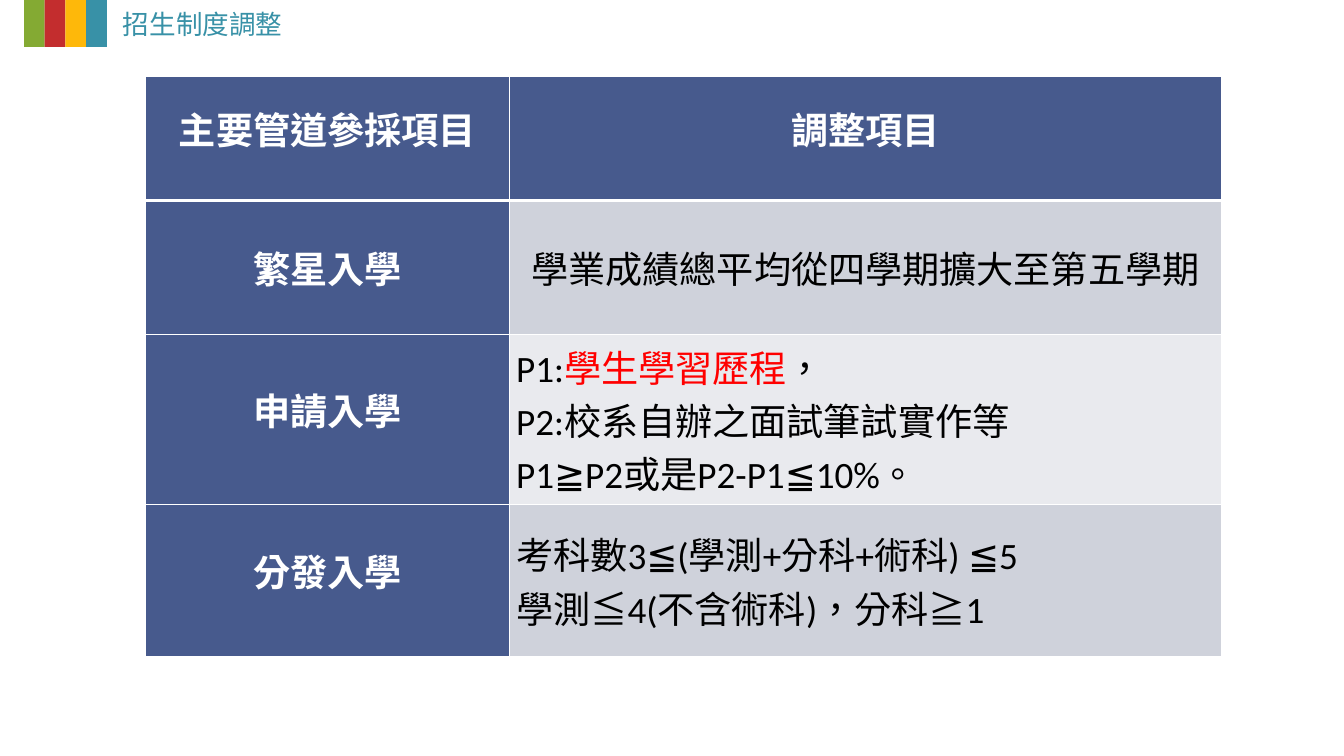
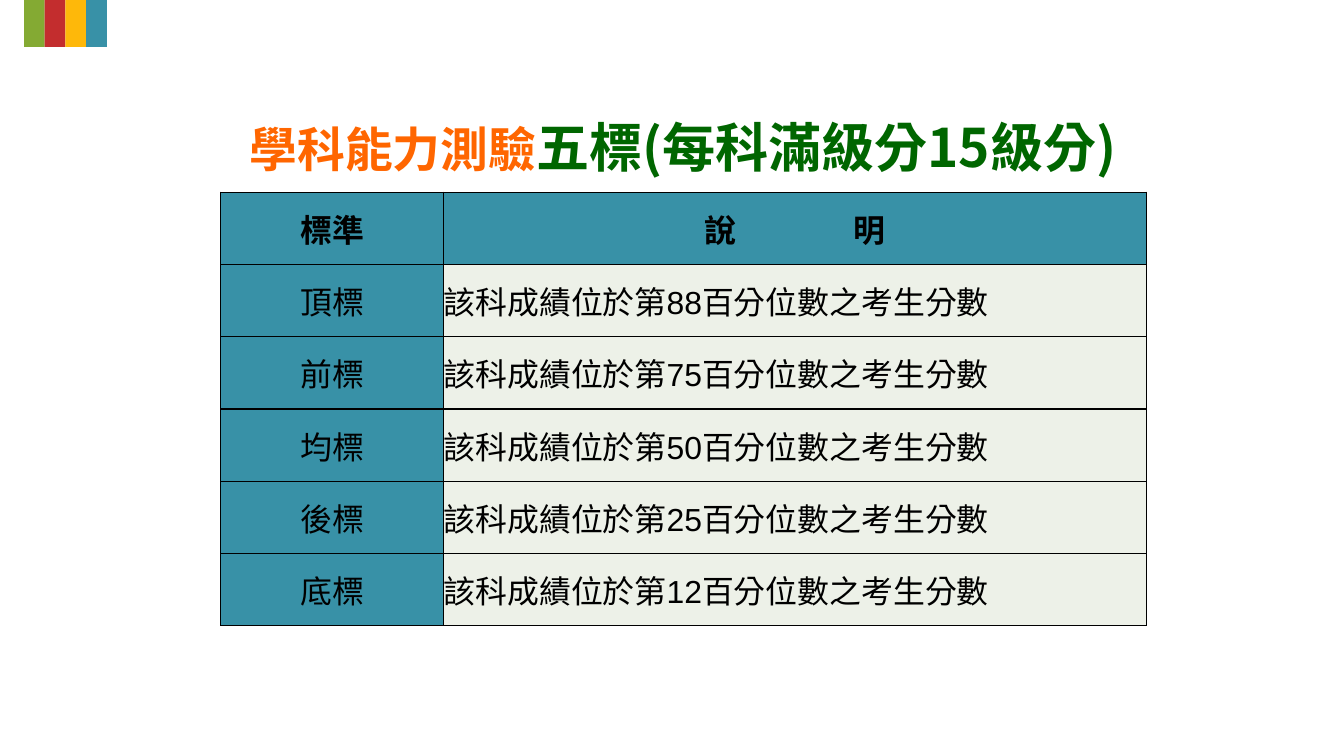
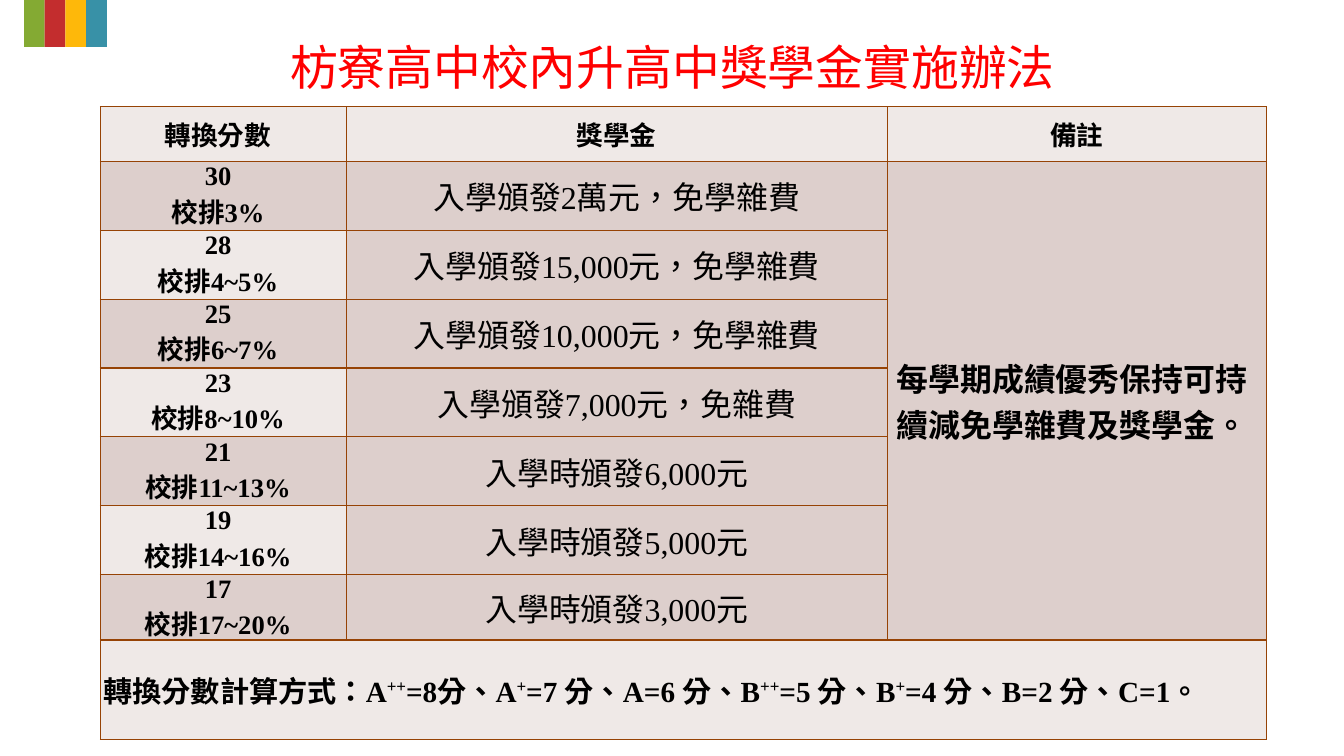
from dataclasses import dataclass
from typing import NamedTuple, Optional

from lxml import etree
from pptx import Presentation
from pptx.dml.color import RGBColor
from pptx.enum.shapes import MSO_SHAPE
from pptx.enum.text import MSO_ANCHOR, PP_ALIGN
from pptx.oxml.ns import qn
from pptx.util import Cm, Pt

LEFT, CENTER, JUSTIFY = PP_ALIGN.LEFT, PP_ALIGN.CENTER, PP_ALIGN.JUSTIFY
MIDDLE = MSO_ANCHOR.MIDDLE
RECTANGLE = MSO_SHAPE.RECTANGLE

CJK_FONT = "Noto Sans CJK SC"
TEAL, RED, BLACK, WHITE = "3891A7", "FF0000", "000000", "FFFFFF"
ORANGE, GREEN = "FF6600", "006600"
BAND_COLORS = ["84AA33", "C32D2E", "FEB80A", TEAL]
NAVY, GREY, PALE_GREY = "475A8D", "CFD2DB", "E9EAEE"
PALE_GREEN = "EDF1E8"
BROWN, ROSE, PALE_ROSE = "964305", "DDCFCC", "EFE9E7"


class Run(NamedTuple):
    text: str
    size: float
    color: str = BLACK
    bold: bool = False
    superscript: bool = False
    spacing: int = 0  # points added after each character


@dataclass
class Cell:
    paragraphs: list[list[Run]]
    fill: str
    align: PP_ALIGN = CENTER
    line_points: Optional[float] = None
    indent: float = 0
    right_inset: Optional[float] = None
    span: tuple[int, int] = (1, 1)


@dataclass
class Grid:
    left: float
    top: float
    widths: list[float]
    heights: list[float]
    rows: list[list[Optional[Cell]]]
    font: str
    border: str
    inset: float = 0
    thick_below: Optional[int] = None
    thick_points: float = 1


class Title(NamedTuple):
    left: float
    top: float
    width: float
    height: float
    runs: list[Run]
    align: PP_ALIGN = CENTER


def rgb(color: str) -> RGBColor:
    return RGBColor.from_string(color)


def write_runs(paragraph, runs: list[Run], font_name: str) -> None:
    for part in runs:
        run = paragraph.add_run()
        run.text = part.text
        font = run.font
        font.name, font.size, font.bold = font_name, Pt(part.size), part.bold
        font.color.rgb = rgb(part.color)
        properties = run._r.get_or_add_rPr()
        properties.set("lang", "zh-TW")
        if part.superscript:
            properties.set("baseline", "34000")
        if part.spacing:
            properties.set("spc", str(part.spacing * 100))
        east_asian = etree.SubElement(properties, qn("a:ea"))
        east_asian.set("typeface", CJK_FONT)


def add_band(slide) -> None:
    width = 0.55
    for index, color in enumerate(BAND_COLORS):
        bar = slide.shapes.add_shape(
            RECTANGLE, Cm(0.64 + index * width), Cm(0), Cm(width), Cm(1.25))
        bar.shadow.inherit = False
        bar.fill.solid()
        bar.fill.fore_color.rgb = rgb(color)
        bar.line.fill.background()


def add_title(slide, title: Title) -> None:
    box = slide.shapes.add_textbox(
        Cm(title.left), Cm(title.top), Cm(title.width), Cm(title.height))
    box.text_frame.word_wrap = True
    paragraph = box.text_frame.paragraphs[0]
    paragraph.alignment = title.align
    paragraph.line_spacing = 0.9
    write_runs(paragraph, title.runs, CJK_FONT)


def set_borders(cell, color: str, top: float, bottom: float) -> None:
    properties = cell._tc.get_or_add_tcPr()
    for side, points in (("L", 1), ("R", 1), ("T", top), ("B", bottom)):
        line = etree.SubElement(properties, qn(f"a:ln{side}"), w=str(Pt(points)))
        fill = etree.SubElement(line, qn("a:solidFill"))
        etree.SubElement(fill, qn("a:srgbClr"), val=color)


def fill_cell(cell, content: Cell, grid: Grid) -> None:
    cell.fill.solid()
    cell.fill.fore_color.rgb = rgb(content.fill)
    cell.vertical_anchor = MIDDLE
    right = grid.inset if content.right_inset is None else content.right_inset
    cell.margin_left, cell.margin_right = Cm(grid.inset), Cm(right)
    cell.margin_top = cell.margin_bottom = 0
    frame = cell.text_frame
    for index, runs in enumerate(content.paragraphs):
        paragraph = frame.add_paragraph() if index else frame.paragraphs[0]
        paragraph.alignment = content.align
        if content.line_points:
            paragraph.line_spacing = Pt(content.line_points)
        if content.indent:
            paragraph._p.get_or_add_pPr().set("marL", str(Cm(content.indent)))
        write_runs(paragraph, runs, grid.font)


def add_grid(slide, grid: Grid) -> None:
    table = slide.shapes.add_table(
        len(grid.heights), len(grid.widths), Cm(grid.left), Cm(grid.top),
        Cm(sum(grid.widths)), Cm(sum(grid.heights))).table
    table.first_row = table.horz_banding = False
    for column, width in zip(table.columns, grid.widths):
        column.width = Cm(width)
    for row, height in zip(table.rows, grid.heights):
        row.height = Cm(height)
    for r, contents in enumerate(grid.rows):
        top = grid.thick_points if r - 1 == grid.thick_below else 1
        bottom = grid.thick_points if r == grid.thick_below else 1
        for c, content in enumerate(contents):
            cell = table.cell(r, c)
            set_borders(cell, grid.border, top, bottom)
            if content is None:
                continue
            down, across = content.span
            if content.span != (1, 1):
                cell.merge(table.cell(r + down - 1, c + across - 1))
            fill_cell(cell, content, grid)


def admission_grid() -> Grid:
    def heading(text: str, line_points: Optional[float] = 25) -> Cell:
        return Cell([[Run(text, 28, WHITE, True)]], NAVY, line_points=line_points)

    def details(fill: str, *lines: list[Run]) -> Cell:
        return Cell(list(lines), fill, LEFT, 40)

    rows = [
        [heading("主要管道參採項目"), heading("調整項目")],
        [heading("繁星入學", None),
         Cell([[Run("學業成績總平均從四學期擴大至第五學期", 28)]], GREY)],
        [heading("申請入學"),
         details(PALE_GREY,
                 [Run("P1:", 28), Run("學生學習歷程", 28, RED), Run("，", 28)],
                 [Run("P2:校系自辦之面試筆試實作等", 28)],
                 [Run("P1≧P2或是P2-P1≦10%。", 28)])],
        [heading("分發入學"),
         details(GREY,
                 [Run("考科數3≦(學測+分科+術科) ≦5", 28)],
                 [Run("學測≦4(不含術科)，分科≧1", 28)])],
    ]
    return Grid(3.86, 2.03, [9.68, 18.92], [3.3, 3.56, 4.52, 4.04], rows,
                "Calibri", WHITE, inset=0.18, thick_below=0, thick_points=3)


def standards_grid() -> Grid:
    percentiles = {"頂標": 88, "前標": 75, "均標": 50, "後標": 25, "底標": 12}
    rows = [[
        Cell([[Run("標準", 24, bold=True)]], TEAL),
        Cell([[Run("說", 24, bold=True, spacing=88),
               Run("明", 24, bold=True)]], TEAL),
    ]]
    for standard, percentile in percentiles.items():
        meaning = f"該科成績位於第{percentile}百分位數之考生分數"
        rows.append([Cell([[Run(standard, 24)]], TEAL),
                     Cell([[Run(meaning, 24)]], PALE_GREEN, LEFT)])
    return Grid(5.87, 5.11, [5.92, 18.67], [1.92] * len(rows), rows,
                "Arial", BLACK)


def scholarship_grid() -> Grid:
    score_inset = 0.28
    awards = [
        ("30", "3%", "入學頒發2萬元，免學雜費"),
        ("28", "4~5%", "入學頒發15,000元，免學雜費"),
        ("25", "6~7%", "入學頒發10,000元，免學雜費"),
        ("23", "8~10%", "入學頒發7,000元，免雜費"),
        ("21", "11~13%", "入學時頒發6,000元"),
        ("19", "14~16%", "入學時頒發5,000元"),
        ("17", "17~20%", "入學時頒發3,000元"),
    ]
    formula = [
        ("轉換分數計算方式：A", "++"), ("=8分、A", "+"),
        ("=7 分、A=6 分、B", "++"), ("=5 分、B", "+"),
        ("=4 分、B=2 分、C=1。", ""),
    ]
    remark = Cell([[Run("每學期成績優秀保持可持續減免學雜費及獎學金。", 24, bold=True)]],
                  ROSE, LEFT, indent=0.25, span=(len(awards), 1))

    def score(fill: str, *lines: str) -> Cell:
        return Cell([[Run(line, 20, bold=True)] for line in lines], fill,
                    right_inset=score_inset)

    rows = [[score(PALE_ROSE, "轉換分數")] + [
        Cell([[Run(label, 20, bold=True)]], PALE_ROSE) for label in ("獎學金", "備註")]]
    for index, (points, rank, award) in enumerate(awards):
        rows.append([
            score(PALE_ROSE if index % 2 else ROSE, points, f"校排{rank}"),
            Cell([[Run(award, 24)]], ROSE),
            None if index else remark,
        ])
    formula_runs = [
        Run(text, 22, bold=True, superscript=raised)
        for base, grade in formula
        for text, raised in ((base, False), (grade, True)) if text]
    rows.append([Cell([formula_runs], PALE_ROSE, JUSTIFY, indent=0.08, span=(1, 3)),
                 None, None])
    return Grid(2.67, 2.84, [6.53, 14.38, 10.08],
                [1.45] + [1.83] * 6 + [1.73, 2.64], rows,
                "Times New Roman", BROWN,
                thick_below=len(awards), thick_points=2)


def main() -> None:
    presentation = Presentation()
    presentation.slide_width, presentation.slide_height = Cm(35.72), Cm(20.09)
    blank = presentation.slide_layouts[6]
    pages = [
        (Title(3.02, 0.18, 9.45, 1, [Run("招生制度調整", 20, TEAL)], LEFT),
         admission_grid()),
        (Title(5.05, 3.1, 26.2, 1.96,
               [Run("學科能力測驗", 36, ORANGE, True),
                Run("五標(每科滿級分15級分)", 40, GREEN, True)]),
         standards_grid()),
        (Title(2.67, 1.04, 30.4, 2, [Run("枋寮高中校內升高中獎學金實施辦法", 36, RED)]),
         scholarship_grid()),
    ]
    for title, grid in pages:
        slide = presentation.slides.add_slide(blank)
        add_band(slide)
        add_title(slide, title)
        add_grid(slide, grid)
    presentation.save("out.pptx")


if __name__ == "__main__":
    main()
